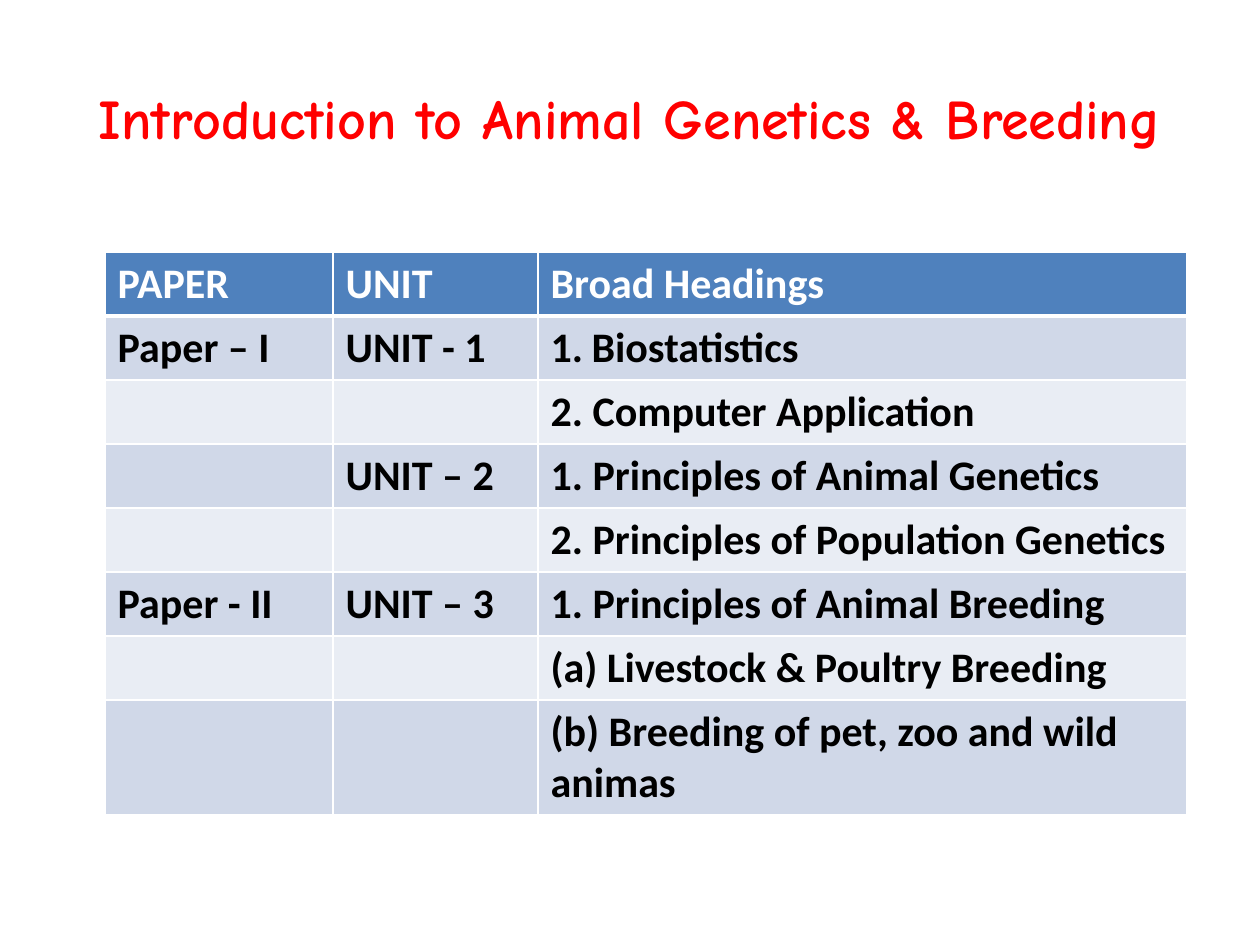
from dataclasses import dataclass

from lxml.etree import SubElement
from pptx import Presentation
from pptx.dml.color import RGBColor
from pptx.enum.text import MSO_ANCHOR, PP_ALIGN
from pptx.oxml.ns import qn
from pptx.util import Emu, Pt

WHITE = RGBColor(0xFF, 0xFF, 0xFF)
BLACK = RGBColor(0x00, 0x00, 0x00)
RED = RGBColor(0xFF, 0x00, 0x00)
HEADER_BLUE = RGBColor(0x4F, 0x81, 0xBD)
BAND_DARK = RGBColor(0xD0, 0xD8, 0xE8)
BAND_LIGHT = RGBColor(0xE9, 0xED, 0xF4)

COLUMN_WIDTHS = (228, 205, 649)
ROW_HEIGHT = 64
LAST_ROW_HEIGHT = 115
NUMBER_INDENT = 41


@dataclass(frozen=True)
class SyllabusRow:
    paper: str
    unit: str
    heading: str
    numbered: bool = False


ROWS = (
    SyllabusRow("PAPER", "UNIT", "Broad Headings"),
    SyllabusRow("Paper – I", "UNIT - 1", "Biostatistics", numbered=True),
    SyllabusRow("", "", "2. Computer Application"),
    SyllabusRow("", "UNIT – 2", "1. Principles of Animal Genetics"),
    SyllabusRow("", "", "2. Principles of Population Genetics"),
    SyllabusRow("Paper - II", "UNIT – 3", "1. Principles of Animal Breeding"),
    SyllabusRow("", "", "(a) Livestock & Poultry Breeding"),
    SyllabusRow("", "", "(b) Breeding of pet, zoo and wild animas"),
)


def px(length: int) -> Emu:
    return Emu(round(length * 914400 / 126))


def write_text(frame, text: str, *, size: int, color: RGBColor, font="Calibri",
               align=PP_ALIGN.LEFT, numbered=False) -> None:
    para = frame.paragraphs[0]
    para.alignment = align
    if numbered:
        properties = para._p.get_or_add_pPr()
        properties.set("marL", str(px(NUMBER_INDENT)))
        properties.set("indent", str(-px(NUMBER_INDENT)))
        SubElement(properties, qn("a:buFont"), typeface="+mj-lt")
        SubElement(properties, qn("a:buAutoNum"), type="arabicPeriod")
    span = para.add_run()
    span.text = text
    span.font.name = font
    span.font.size = Pt(size)
    span.font.bold = True
    span.font.color.rgb = color


def set_borders(cell, *, top: int, bottom: int) -> None:
    properties = cell._tc.get_or_add_tcPr()
    for side, points in (("L", 1), ("R", 1), ("T", top), ("B", bottom)):
        line = SubElement(properties, qn(f"a:ln{side}"), w=str(Pt(points)))
        fill = SubElement(line, qn("a:solidFill"))
        SubElement(fill, qn("a:srgbClr"), val=str(WHITE))


def add_title(page) -> None:
    box = page.shapes.add_textbox(px(63), px(38), px(1134), px(158))
    box.text_frame.word_wrap = True
    box.text_frame.vertical_anchor = MSO_ANCHOR.MIDDLE
    write_text(box.text_frame, "Introduction to Animal Genetics & Breeding",
               size=32, color=RED, font="Comic Neue", align=PP_ALIGN.CENTER)


def add_syllabus(page, rows: tuple[SyllabusRow, ...]) -> None:
    heights = [ROW_HEIGHT] * (len(rows) - 1) + [LAST_ROW_HEIGHT]
    table = page.shapes.add_table(
        len(rows), len(COLUMN_WIDTHS), px(105), px(252),
        px(sum(COLUMN_WIDTHS)), px(sum(heights))).table
    for column, width in zip(table.columns, COLUMN_WIDTHS):
        column.width = px(width)

    for index, (row, height) in enumerate(zip(rows, heights)):
        table.rows[index].height = px(height)
        is_header = index == 0
        band = BAND_DARK if index % 2 else BAND_LIGHT
        for column, text in enumerate((row.paper, row.unit, row.heading)):
            cell = table.cell(index, column)
            # A thicker rule separates the header from the body
            set_borders(cell, top=3 if index == 1 else 1,
                        bottom=3 if is_header else 1)
            cell.fill.solid()
            cell.fill.fore_color.rgb = HEADER_BLUE if is_header else band
            if text:
                write_text(cell.text_frame, text, size=24,
                           color=WHITE if is_header else BLACK,
                           numbered=row.numbered and column == 2)


def main() -> None:
    deck = Presentation()
    deck.slide_width, deck.slide_height = px(1260), px(945)
    page = deck.slides.add_slide(deck.slide_layouts[6])
    add_title(page)
    add_syllabus(page, ROWS)
    deck.save("out.pptx")


if __name__ == "__main__":
    main()
